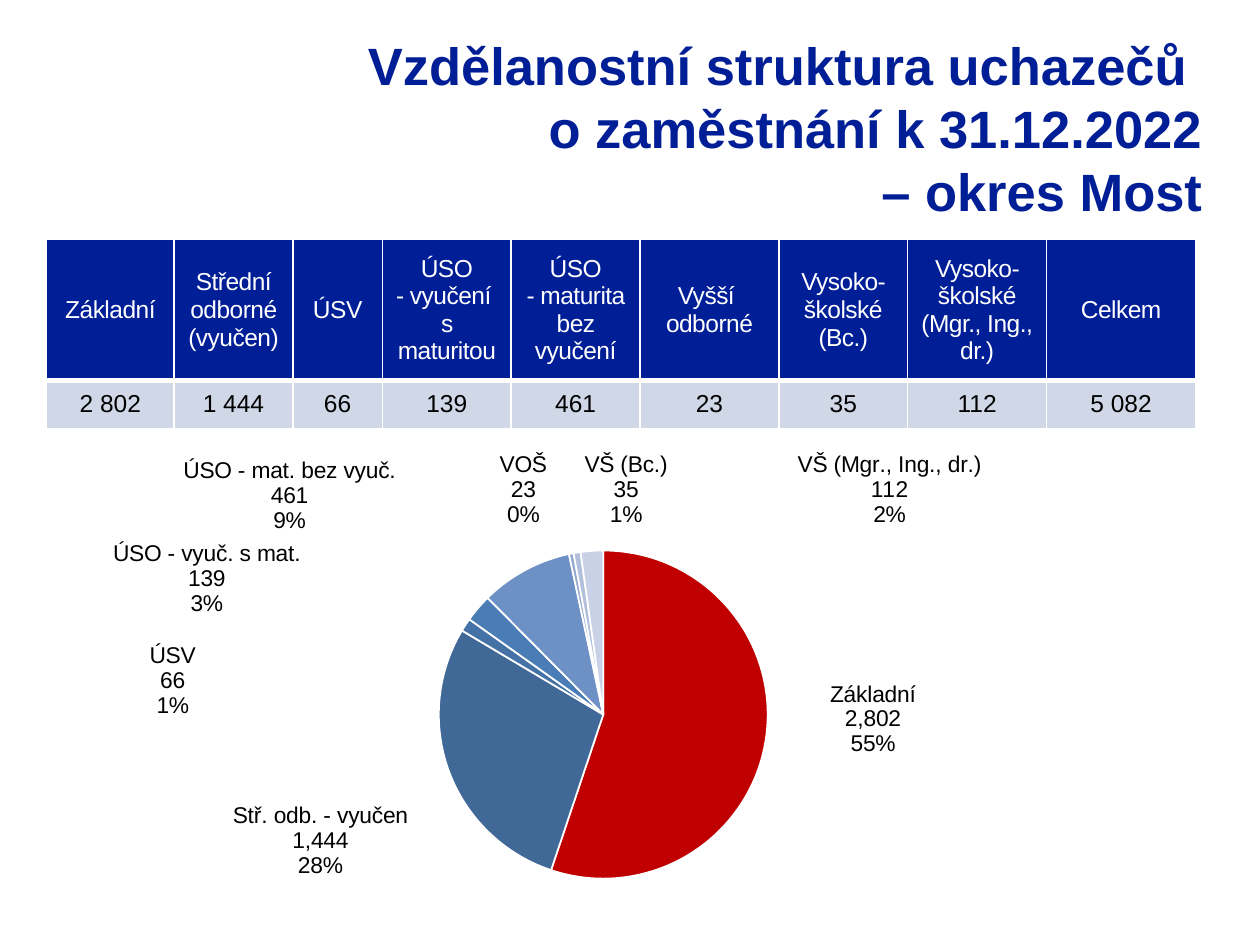
from lxml import etree
from pptx import Presentation
from pptx.chart.data import CategoryChartData
from pptx.dml.color import RGBColor
from pptx.enum.chart import XL_CHART_TYPE, XL_LABEL_POSITION
from pptx.enum.text import MSO_ANCHOR, PP_ALIGN
from pptx.oxml import parse_xml
from pptx.oxml.ns import nsdecls, qn
from pptx.util import Inches, Pt

NAVY = RGBColor(0x00, 0x1E, 0x96)
WHITE = RGBColor(0xFF, 0xFF, 0xFF)
BLACK = RGBColor(0x00, 0x00, 0x00)
PALE = RGBColor(0xD0, 0xD8, 0xE8)
FONT = "Arial"

TITLE = ["Vzdělanostní struktura uchazečů \vo zaměstnání k 31.12.2022", "– okres Most"]
COLUMNS = [
    ("Základní", "2 802", 1.01),
    ("Střední odborné (vyučen)", "1 444", 0.94),
    ("ÚSV", "66", 0.71),
    ("ÚSO\v- vyučení \vs maturitou", "139", 1.02),
    ("ÚSO\v- maturita bez vyučení", "461", 1.02),
    ("Vyšší \vodborné", "23", 1.1),
    ("Vysoko-školské\n(Bc.)", "35", 1.02),
    ("Vysoko-školské\v(Mgr., Ing.,\vdr.)", "112", 1.1),
    ("Celkem", "5 082", 1.18),
]
SLICES = [
    ("Základní", 2802, RGBColor(0xC0, 0x00, 0x00), 0.05, -0.14),
    ("Stř. odb. - vyučen", 1444, RGBColor(0x40, 0x69, 0x98), -0.03, 0.07),
    ("ÚSV", 66, RGBColor(0x44, 0x72, 0xA7), -0.23, 0.23),
    ("ÚSO - vyuč. s mat.", 139, RGBColor(0x4A, 0x7C, 0xB6), -0.15, 0.03),
    ("ÚSO - mat. bez vyuč.", 461, RGBColor(0x6E, 0x91, 0xC5), -0.11, -0.07),
    ("VOŠ", 23, RGBColor(0x93, 0xA9, 0xCF), -0.02, -0.07),
    ("VŠ (Bc.)", 35, RGBColor(0xB1, 0xBF, 0xDB), 0.08, -0.06),
    ("VŠ (Mgr., Ing., dr.)", 112, RGBColor(0xC8, 0xD1, 0xE5), 0.26, -0.06),
]


def set_font(font, color, **values):
    """Apply the slide font, a colour and further format values."""
    for name, value in {"name": FONT, **values}.items():
        setattr(font, name, value)
    font.color.rgb = color


def add_title(s, x, y, w, h):
    """Place the right-aligned heading."""
    tf = s.shapes.add_textbox(x, y, w, h).text_frame
    tf.word_wrap = True
    tf.text = "\n".join(TITLE)
    for p in tf.paragraphs:
        p.alignment = PP_ALIGN.RIGHT
        for r in p.runs:
            set_font(r.font, NAVY, size=Pt(30), bold=True)


def add_borders(cell, bottom):
    """Draw white cell borders with the given bottom width in points."""
    for i, (side, width) in enumerate(zip("LRTB", (1, 1, 1, bottom))):
        cell._tc.get_or_add_tcPr().insert(i, parse_xml(
            f'<a:ln{side} {nsdecls("a")} w="{Pt(width)}"><a:solidFill>'
            f'<a:srgbClr val="{WHITE}"/></a:solidFill></a:ln{side}>'))


def fill_cell(cell, text, fill, color, bottom, spacing):
    """Write centred text into a filled and bordered cell."""
    cell.text = text
    cell.vertical_anchor = MSO_ANCHOR.MIDDLE
    cell.fill.solid()
    cell.fill.fore_color.rgb = fill
    add_borders(cell, bottom)
    for p in cell.text_frame.paragraphs:
        p.alignment = PP_ALIGN.CENTER
        for r in p.runs:
            set_font(r.font, color, size=Pt(14), bold=False)
            r.font._element.set("spc", str(spacing))


def add_education_table(s, x, y, w, h):
    """Place the table of job seekers by education."""
    table = s.shapes.add_table(2, len(COLUMNS), x, y, w, h).table
    table.rows[0].height = Inches(1.12)
    table.rows[1].height = h - Inches(1.12)
    total = sum(width for _, _, width in COLUMNS)
    for i, (heading, count, width) in enumerate(COLUMNS):
        table.columns[i].width = int(w * width / total)
        fill_cell(table.cell(0, i), heading, NAVY, WHITE, 3, -30)
        fill_cell(table.cell(1, i), count, PALE, BLACK, 1, 0)


def layout_xml(**values):
    """Return a manual chart layout with the given settings."""
    parts = "".join(f'<c:{k} val="{v}"/>' for k, v in values.items())
    return parse_xml(f'<c:layout {nsdecls("c")}><c:manualLayout>{parts}'
                     '</c:manualLayout></c:layout>')


def set_plot_layout(chart):
    """Fix the inner plot area of the chart."""
    area = chart._chartSpace.find(".//" + qn("c:plotArea"))
    for old in area.findall(qn("c:layout")):
        area.remove(old)
    area.insert(0, layout_xml(layoutTarget="inner", xMode="edge", yMode="edge",
                              x=0.06, y=0.23, w=0.84, h=0.77))


def add_separator(labels):
    """Put each part of the labels on its own line."""
    sep = etree.Element(qn("c:separator"))
    sep.text = "\n"
    labels.find(qn("c:showBubbleSize")).addnext(sep)


def format_slice(series, i, color, dx, dy):
    """Colour one slice and shift its label."""
    point = series.points[i]
    point.format.fill.solid()
    point.format.fill.fore_color.rgb = color
    point.format.line.color.rgb = WHITE
    point.format.line.width = Pt(1)
    set_font(point.data_label.font, BLACK, size=Pt(13))
    point.data_label.position = XL_LABEL_POSITION.OUTSIDE_END
    label = series._element.find(qn("c:dLbls")).findall(qn("c:dLbl"))[i]
    label.find(qn("c:idx")).addnext(layout_xml(x=dx, y=dy))
    for name in ("showVal", "showCatName", "showPercent"):
        label.find(qn("c:" + name)).set("val", "1")
    label.find(qn("c:showLegendKey")).set("val", "0")
    add_separator(label)


def add_education_pie(s, x, y, w, h):
    """Place the pie of education shares."""
    data = CategoryChartData(number_format="#,##0")
    data.categories = [row[0] for row in SLICES]
    data.add_series("Series 1", [row[1] for row in SLICES])
    chart = s.shapes.add_chart(XL_CHART_TYPE.PIE, x, y, w, h, data).chart
    chart.has_title = False
    chart.has_legend = False
    set_font(chart.font, BLACK, size=Pt(18))
    set_plot_layout(chart)
    plot = chart.plots[0]
    plot.vary_by_categories = True
    series = plot.series[0]
    labels = series.data_labels
    values = {"show_value": True, "show_category_name": True, "show_percentage": True,
              "show_legend_key": False, "position": XL_LABEL_POSITION.OUTSIDE_END}
    for name, value in values.items():
        setattr(labels, name, value)
    set_font(labels.font, BLACK, size=Pt(13))
    for i, (_, _, color, dx, dy) in enumerate(SLICES):
        format_slice(series, i, color, dx, dy)
    group = series._element.find(qn("c:dLbls"))
    add_separator(group)
    for leader in group.findall(qn("c:showLeaderLines")):
        leader.set("val", "0")


def main():
    """Build the slide and save it."""
    prs = Presentation()
    prs.slide_width, prs.slide_height = Inches(10), Inches(7.5)
    s = prs.slides.add_slide(prs.slide_layouts[6])
    add_title(s, Inches(2.4), Inches(0.21), Inches(7.24), Inches(1.5))
    add_education_table(s, Inches(0.37), Inches(1.9), Inches(9.12), Inches(1.5))
    add_education_pie(s, Inches(0.42), Inches(3.59), Inches(9.1), Inches(3.39))
    prs.save("out.pptx")


if __name__ == "__main__":
    main()
